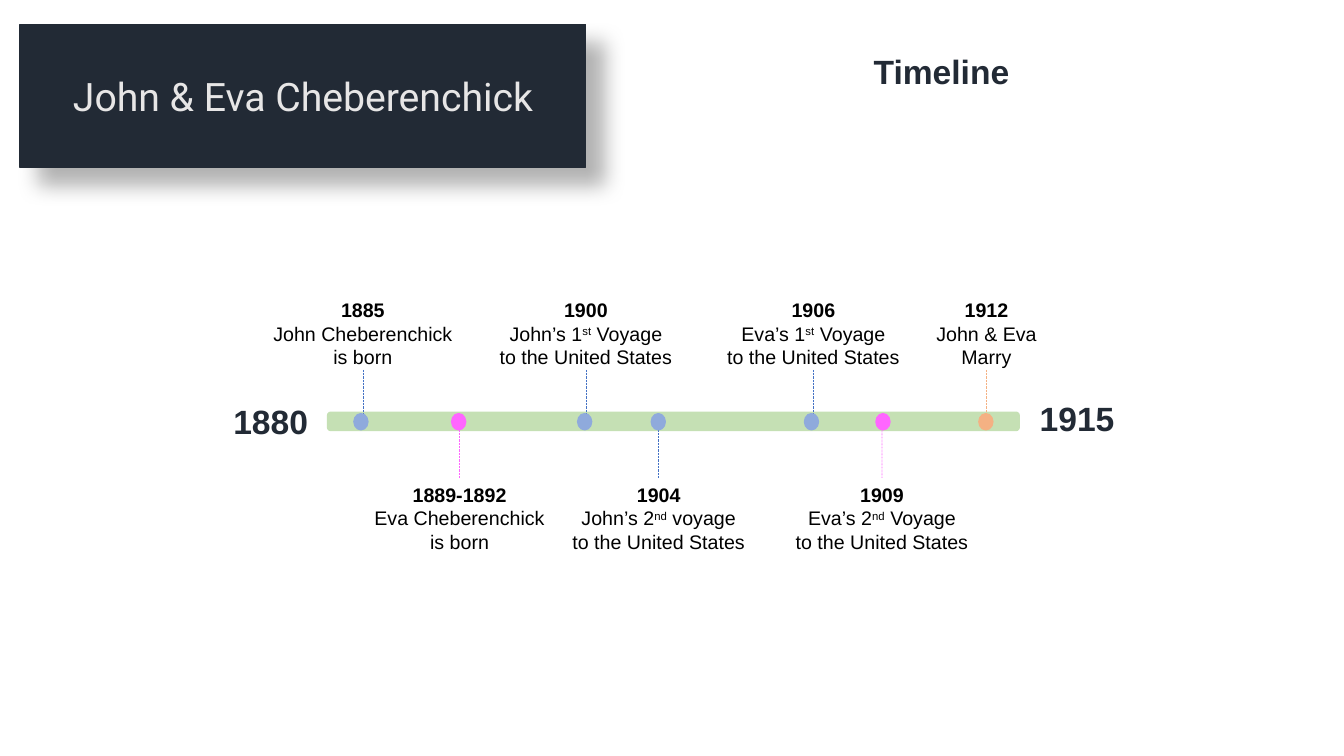
from dataclasses import dataclass

import pptx
import pptx.dml.color
import pptx.enum.dml
import pptx.enum.shapes
import pptx.enum.text
import pptx.oxml
import pptx.oxml.ns
import pptx.util

Pt = pptx.util.Pt
SHAPES = pptx.enum.shapes.MSO_SHAPE
ANCHORS = pptx.enum.text.MSO_ANCHOR


@dataclass(frozen=True)
class Theme:
    """Colours, fonts and type sizes of the slide."""
    navy: str = "222A35"
    pale: str = "E7E6E6"
    black: str = "000000"
    bar: str = "C5E0B4"
    blue: str = "8FAADC"
    stem_blue: str = "4472C4"
    pink: str = "FF66FF"
    orange: str = "F4B183"
    title_font: str = "Roboto"
    body_font: str = "Arial"
    title_size: int = 28
    heading_size: int = 24
    label_size: int = 14


THEME = Theme()
JOHN = (THEME.blue, THEME.stem_blue)
EVA = (THEME.pink, THEME.pink)
BOTH = (THEME.orange, THEME.orange)

# "^" encloses a superscript; columns: stem x, dot x, label width, above, colours, lines
EVENTS = [
    (25.2, 23.8, 143.3, True, JOHN, ["1885", "John Cheberenchick", "is born"]),
    (94.3, 93.6, 136.8, False, EVA, ["1889-1892", "Eva Cheberenchick", "is born"]),
    (184.5, 183.6, 138.2, True, JOHN, ["1900", "John’s 1^st^ Voyage", "to the United States"]),
    (236.5, 236.2, 138.2, False, JOHN, ["1904", "John’s 2^nd^ voyage", "to the United States"]),
    (347, 345.6, 138.2, True, JOHN, ["1906", "Eva’s 1^st^ Voyage", "to the United States"]),
    (396, 396.7, 138.2, False, EVA, ["1909", "Eva’s 2^nd^ Voyage", "to the United States"]),
    (470.7, 470.2, 86.4, True, BOTH, ["1912", "John & Eva", "Marry"]),
]


def rgb(value):
    """Turn a hex string into a colour."""
    return pptx.dml.color.RGBColor.from_string(value)


def write_text(shape, lines, *, size, color, font=THEME.body_font, bold_lines=0, wrap=True, grow=True):
    """Fill a shape with centred lines, the first bold_lines of them bold."""
    frame = shape.text_frame
    frame.word_wrap = wrap
    if grow:
        frame.auto_size = pptx.enum.text.MSO_AUTO_SIZE.SHAPE_TO_FIT_TEXT
    for index, line in enumerate(lines):
        paragraph = frame.add_paragraph() if index else frame.paragraphs[0]
        paragraph.alignment = pptx.enum.text.PP_ALIGN.CENTER
        for part, text in enumerate(line.split("^")):
            run = paragraph.add_run()
            run.text = text
            run.font.name = font
            run.font.size = Pt(size)
            run.font.bold = index < bold_lines
            run.font.color.rgb = rgb(color)
            if part % 2:
                run._r.get_or_add_rPr().set("baseline", "30000")


def add_block(slide, kind, box, fill):
    """Add a flat shape whose outline matches its fill."""
    shape = slide.shapes.add_shape(kind, *map(Pt, box))
    shape.shadow.inherit = False
    shape.fill.solid()
    shape.fill.fore_color.rgb = rgb(fill)
    shape.line.color.rgb = rgb(fill)
    shape.line.width = Pt(1)
    return shape


def add_label(slide, box, lines, **text_format):
    """Add a text box holding the given lines."""
    label = slide.shapes.add_textbox(*map(Pt, box))
    write_text(label, lines, **text_format)
    return label


def add_stem(slide, x, start, end, color):
    """Add a thin dotted vertical line."""
    stem = slide.shapes.add_connector(
        pptx.enum.shapes.MSO_CONNECTOR.STRAIGHT, Pt(x), Pt(start), Pt(x), Pt(end))
    stem.line.color.rgb = rgb(color)
    stem.line.width = Pt(0.5)
    stem.line.dash_style = pptx.enum.dml.MSO_LINE.ROUND_DOT
    properties = stem._element.spPr
    properties.append(pptx.oxml.parse_xml(f'<a:effectLst {pptx.oxml.ns.nsdecls("a")}/>'))
    return stem


def add_title_panel(slide, box):
    """Draw the dark name panel with its soft shadow."""
    panel = add_block(slide, SHAPES.RECTANGLE, box, THEME.navy)
    effects = panel._element.spPr.find(pptx.oxml.ns.qn("a:effectLst"))
    effects.append(pptx.oxml.parse_xml(
        f'<a:outerShdw {pptx.oxml.ns.nsdecls("a")} blurRad="{Pt(15)}" dist="{Pt(18)}" '
        'dir="2700000" algn="tl" rotWithShape="0"><a:srgbClr val="000000">'
        '<a:alpha val="30000"/></a:srgbClr></a:outerShdw>'))
    panel.text_frame.vertical_anchor = ANCHORS.MIDDLE
    write_text(panel, ["John & Eva Cheberenchick"], size=THEME.title_size,
               color=THEME.pale, font=THEME.title_font, grow=False)


def add_heading(slide, box, text):
    """Draw a bold navy heading."""
    add_label(slide, box, [text], size=THEME.heading_size, color=THEME.navy, bold_lines=1)


def add_event(slide, bar_box, event):
    """Draw one event's label, stem and dot relative to the bar."""
    left, top, _, height = bar_box
    stem_x, dot_x, width, above, (dot_color, stem_color), lines = event
    middle = top + height / 2
    label_top = top - 85 if above else top + 46.8
    label = add_label(slide, (left + stem_x - width / 2, label_top, width, 58.3), lines,
                      size=THEME.label_size, color=THEME.black, bold_lines=1, wrap=False)
    stem_end = top - 30.3 if above else label_top
    stem = add_stem(slide, left + stem_x, stem_end, middle, stem_color)
    if not above:
        stem.begin_connect(label, 0)
    add_block(slide, SHAPES.OVAL, (left + dot_x - 5, middle - 5.5, 10, 11.5), dot_color)


def add_timeline(slide, box):
    """Draw the bar, its end years and all events."""
    left, top, width, _ = box
    add_block(slide, SHAPES.ROUNDED_RECTANGLE, box, THEME.bar)
    add_heading(slide, (left - 74.9, top - 11.5, 68.4, 36), "1880")
    add_heading(slide, (left + width + 7.1, top - 13.7, 68.4, 36), "1915")
    for event in EVENTS:
        add_event(slide, box, event)


def main():
    """Build and save the slide."""
    presentation = pptx.Presentation()
    presentation.slide_width, presentation.slide_height = Pt(960), Pt(540)
    slide = presentation.slides.add_slide(presentation.slide_layouts[6])
    add_title_panel(slide, (14.4, 17.3, 404, 102.2))
    add_heading(slide, (431.3, 33.1, 482.4, 36), "Timeline")
    add_timeline(slide, (234, 294.5, 494, 13))
    presentation.save("out.pptx")


if __name__ == "__main__":
    main()
